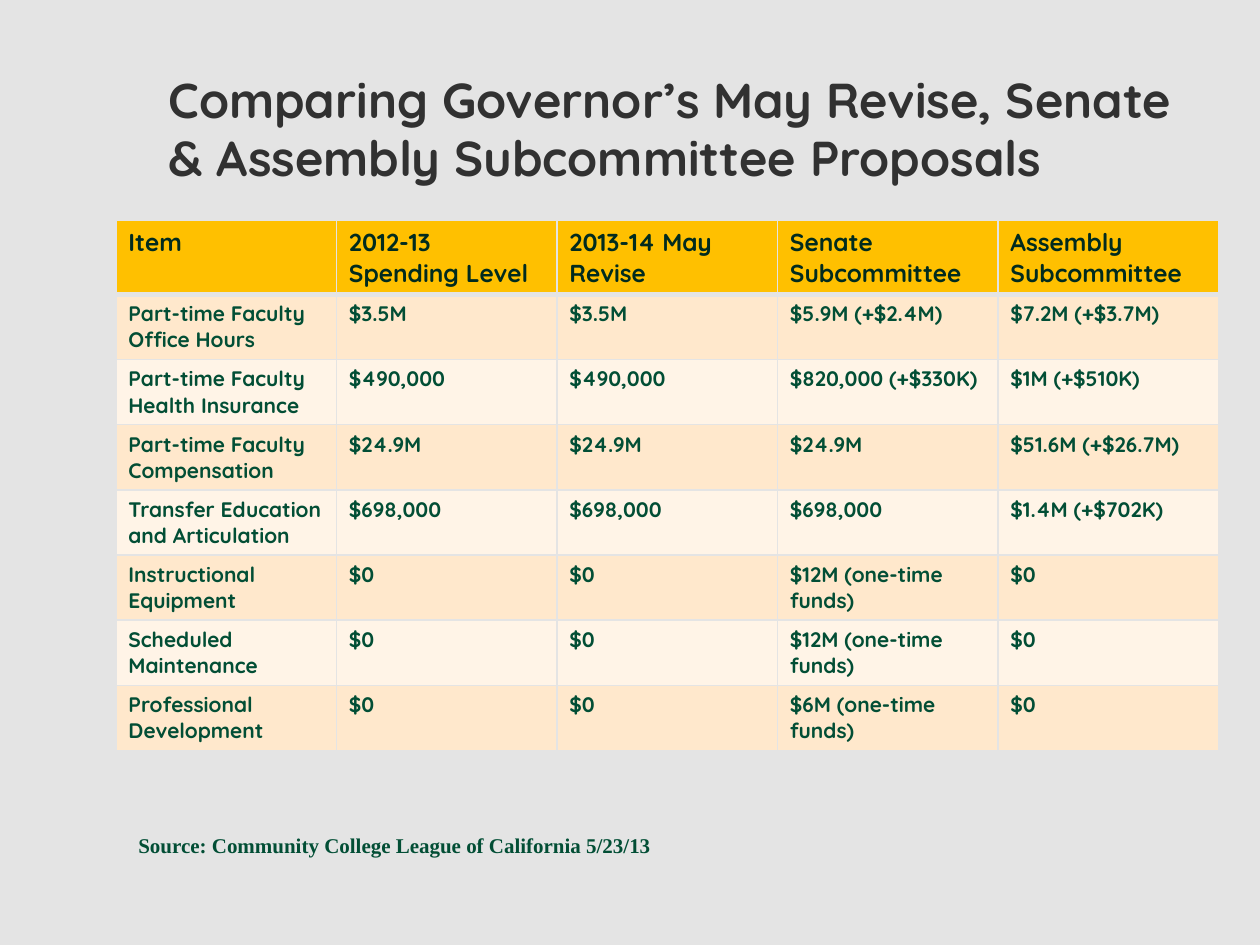
import dataclasses

import pptx
import pptx.dml.color
import pptx.enum.text
import pptx.oxml.ns
import pptx.util
from lxml import etree

Pt = pptx.util.Pt


@dataclasses.dataclass(frozen=True)
class Theme:
    background: str = "E4E4E4"
    header_fill: str = "FFC000"
    band_fills: tuple = ("FFE8CC", "FFF4E7")
    title_color: str = "313131"
    header_color: str = "012B1E"
    body_color: str = "024E35"
    main_font: str = "Quicksand"
    source_font: str = "Times New Roman"
    title_size: int = 28
    header_size: int = 14
    body_size: int = 12
    border: int = 1
    header_rule: int = 3


THEME = Theme()

HEADERS = ["Item", "2012-13 Spending Level", "2013-14 May Revise",
           "Senate Subcommittee", "Assembly Subcommittee"]
PROPOSALS = [
    ["Part-time Faculty Office Hours", "$3.5M", "$3.5M", "$5.9M (+$2.4M)", "$7.2M (+$3.7M)"],
    ["Part-time Faculty Health Insurance", "$490,000", "$490,000", "$820,000 (+$330K)", "$1M (+$510K)"],
    ["Part-time Faculty Compensation", "$24.9M", "$24.9M", "$24.9M", "$51.6M (+$26.7M)"],
    ["Transfer Education and Articulation", "$698,000", "$698,000", "$698,000", "$1.4M (+$702K)"],
    ["Instructional Equipment", "$0", "$0", "$12M (one-time funds)", "$0"],
    ["Scheduled Maintenance", "$0", "$0", "$12M (one-time funds)", "$0"],
    ["Professional Development", "$0", "$0", "$6M (one-time funds)", "$0"],
]


def rgb(value):
    return pptx.dml.color.RGBColor.from_string(value)


def set_text(frame, text, font, size, color):
    frame.text = text
    for span in frame.paragraphs[0].runs:
        span.font.name = font
        span.font.size = Pt(size)
        span.font.bold = True
        span.font.color.rgb = rgb(color)


def add_text(page, left, top, width, height, text, font, size, color):
    box = page.shapes.add_textbox(Pt(left), Pt(top), Pt(width), Pt(height))
    box.text_frame.word_wrap = True
    box.text_frame.vertical_anchor = pptx.enum.text.MSO_ANCHOR.MIDDLE
    set_text(box.text_frame, text, font, size, color)


def set_borders(cell, top, bottom):
    properties = cell._tc.get_or_add_tcPr()
    widths = {"lnL": THEME.border, "lnR": THEME.border, "lnT": top, "lnB": bottom}
    qn = pptx.oxml.ns.qn
    for side, width in widths.items():
        line = etree.SubElement(properties, qn(f"a:{side}"), w=str(Pt(width)))
        fill = etree.SubElement(line, qn("a:solidFill"))
        etree.SubElement(fill, qn("a:srgbClr"), val=THEME.background)


def add_comparison(page, left, top, column_width, row_height):
    rows = [HEADERS] + PROPOSALS
    table = page.shapes.add_table(
        len(rows), len(HEADERS), Pt(left), Pt(top),
        Pt(column_width * len(HEADERS)), Pt(row_height * len(rows))).table
    for column in table.columns:
        column.width = Pt(column_width)
    for index, values in enumerate(rows):
        table.rows[index].height = Pt(row_height)
        if index == 0:
            fill, size, color = THEME.header_fill, THEME.header_size, THEME.header_color
        else:
            fill = THEME.band_fills[(index - 1) % 2]
            size, color = THEME.body_size, THEME.body_color
        # The heavier rule lies between the header and the first body row
        above = THEME.header_rule if index == 1 else THEME.border
        below = THEME.header_rule if index == 0 else THEME.border
        for cell, value in zip(table.rows[index].cells, values):
            set_borders(cell, above, below)
            cell.fill.solid()
            cell.fill.fore_color.rgb = rgb(fill)
            set_text(cell.text_frame, value, THEME.main_font, size, color)


def main():
    deck = pptx.Presentation()
    deck.slide_width, deck.slide_height = Pt(720), Pt(540)
    page = deck.slides.add_slide(deck.slide_layouts[6])
    page.background.fill.solid()
    page.background.fill.fore_color.rgb = rgb(THEME.background)

    # Proposal table
    add_comparison(page, 66.2, 126, 126, 29.3)

    # Title
    add_text(page, 89.3, 32.4, 600.5, 81.4,
             "Comparing Governor’s May Revise, Senate & Assembly Subcommittee Proposals",
             THEME.main_font, THEME.title_size, THEME.title_color)

    # Source line
    add_text(page, 72, 458.6, 540, 48.2,
             "Source: Community College League of California 5/23/13",
             THEME.source_font, THEME.body_size, THEME.body_color)

    deck.save("out.pptx")


if __name__ == "__main__":
    main()
